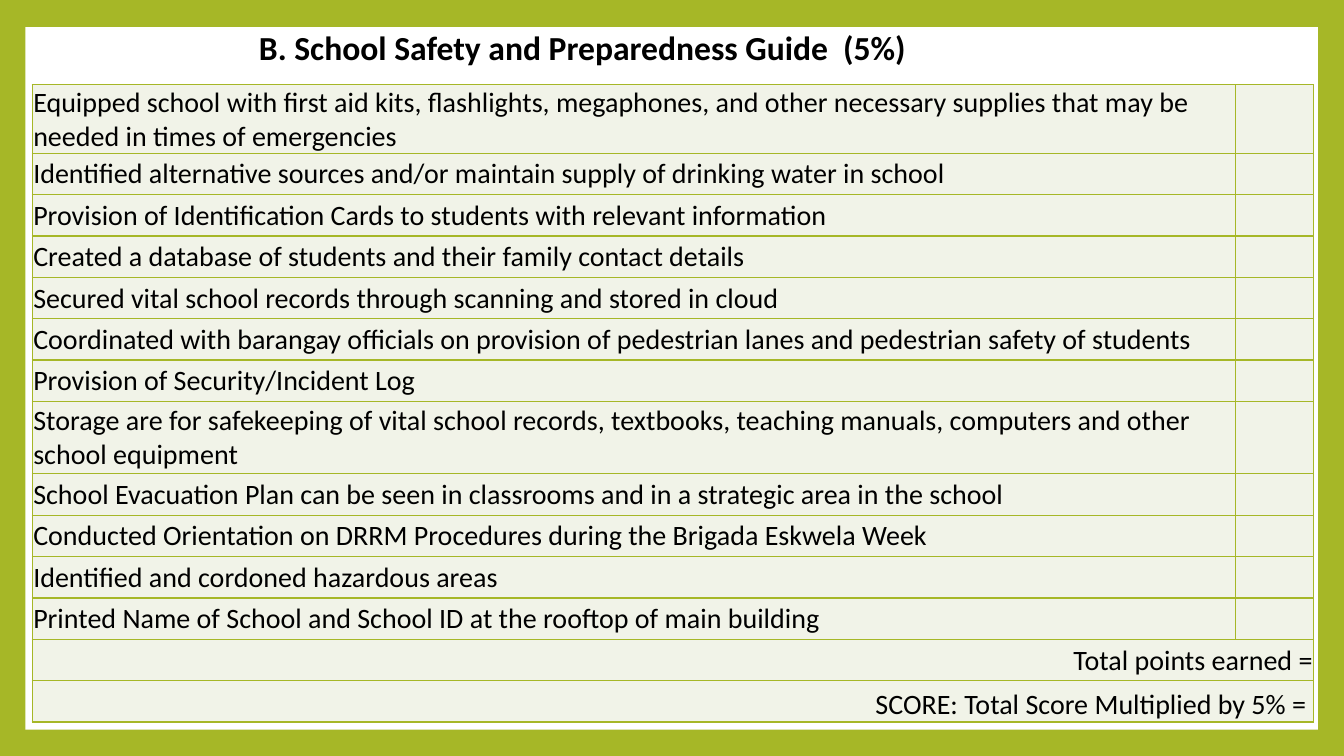
from dataclasses import dataclass

from lxml import etree
from pptx import Presentation
from pptx import util as u
from pptx.dml.color import RGBColor
from pptx.enum import shapes, text
from pptx.oxml import ns

OLIVE = RGBColor(0xA6, 0xB7, 0x27)
PALE = RGBColor(0xF1, 0xF3, 0xE8)
WHITE = RGBColor(0xFF, 0xFF, 0xFF)
BLACK = RGBColor(0x00, 0x00, 0x00)

SLIDE_WIDTH, SLIDE_HEIGHT = u.Inches(13.33), u.Inches(7.5)
CELL_INSETS = {"margin_left": u.Inches(0.01), "margin_right": u.Inches(0.01),
               "margin_top": u.Inches(0.01), "margin_bottom": 0}
LEFT, RIGHT = text.PP_ALIGN.LEFT, text.PP_ALIGN.RIGHT
MIDDLE, BOTTOM = text.MSO_ANCHOR.MIDDLE, text.MSO_ANCHOR.BOTTOM

# Lengths are percentages of the slide's width or height
COLUMN_SHARES = (89.5, 5.85)
ROW_SHARE = 5.47


@dataclass(frozen=True)
class Area:
    left: float
    top: float
    width: float
    height: float

    def box(self) -> tuple[int, int, int, int]:
        return (across(self.left), down(self.top),
                across(self.width), down(self.height))


@dataclass(frozen=True)
class GuideRow:
    wording: str
    height: float = ROW_SHARE
    align: text.PP_ALIGN = LEFT
    anchor: text.MSO_ANCHOR = MIDDLE
    merged: bool = False


PANEL = Area(1.88, 3.6, 96.17, 92.93)
HEADING = Area(18.53, 3.6, 62.57, 5.2)
GUIDE_ROWS = (
    GuideRow("Equipped school with first aid kits, flashlights, megaphones, and other "
             "necessary supplies that may be needed in times of emergencies", 9.07),
    GuideRow("Identified alternative sources and/or maintain supply of drinking water in school"),
    GuideRow("Provision of Identification Cards to students with relevant information"),
    GuideRow("Created a database of students and their family contact details"),
    GuideRow("Secured vital school records through scanning and stored in cloud"),
    GuideRow("Coordinated with barangay officials on provision of pedestrian lanes "
             "and pedestrian safety of students"),
    GuideRow("Provision of Security/Incident Log"),
    GuideRow("Storage are for safekeeping of vital school records, textbooks, teaching "
             "manuals, computers and other school equipment", 9.6),
    GuideRow("School Evacuation Plan can be seen in classrooms and in a strategic area in the school"),
    GuideRow("Conducted Orientation on DRRM Procedures during the Brigada Eskwela Week"),
    GuideRow("Identified and cordoned hazardous areas"),
    GuideRow("Printed Name of School and School ID at the rooftop of main building"),
    GuideRow("Total points earned =", align=RIGHT, merged=True),
    GuideRow("SCORE: Total Score Multiplied by 5% = ", align=RIGHT, anchor=BOTTOM, merged=True),
)
GUIDE = Area(2.4, 11.2, sum(COLUMN_SHARES), sum(row.height for row in GUIDE_ROWS))


def across(share: float) -> int:
    return round(SLIDE_WIDTH * share / 100)


def down(share: float) -> int:
    return round(SLIDE_HEIGHT * share / 100)


def apply(target, formats: dict) -> None:
    for attribute, value in formats.items():
        setattr(target, attribute, value)


def write(paragraph, wording: str, size: int, bold: bool = False) -> None:
    run = paragraph.add_run()
    run.text = wording
    apply(run.font, {"name": "Calibri", "size": u.Pt(size), "bold": bold})
    run.font.color.rgb = BLACK


def style_cell(cell) -> None:
    apply(cell, CELL_INSETS)
    properties = cell._tc.get_or_add_tcPr()
    for side in ("lnL", "lnR", "lnT", "lnB"):
        line = etree.SubElement(properties, ns.qn(f"a:{side}"), w=str(u.Pt(1)))
        fill = etree.SubElement(line, ns.qn("a:solidFill"))
        etree.SubElement(fill, ns.qn("a:srgbClr"), val=str(OLIVE))
    cell.fill.solid()
    cell.fill.fore_color.rgb = PALE


def draw_panel(slide) -> None:
    panel = slide.shapes.add_shape(shapes.MSO_SHAPE.RECTANGLE, *PANEL.box())
    panel.shadow.inherit = False
    panel.fill.solid()
    panel.fill.fore_color.rgb = WHITE
    panel.line.fill.background()


def draw_heading(slide) -> None:
    frame = slide.shapes.add_textbox(*HEADING.box()).text_frame
    apply(frame, {"word_wrap": True, "vertical_anchor": MIDDLE})
    heading = frame.paragraphs[0]
    apply(heading, {"space_before": u.Pt(5), "space_after": u.Pt(6)})
    write(heading, "B. School Safety and Preparedness Guide  (5%)", 24, bold=True)


def draw_guide(slide) -> None:
    guide = slide.shapes.add_table(len(GUIDE_ROWS), len(COLUMN_SHARES), *GUIDE.box()).table
    apply(guide, {"first_row": False, "horz_banding": False})
    for column, share in zip(guide.columns, COLUMN_SHARES):
        column.width = across(share)
    for index, entry in enumerate(GUIDE_ROWS):
        guide.rows[index].height = down(entry.height)
        item, points = guide.cell(index, 0), guide.cell(index, 1)
        for cell in (item, points):
            style_cell(cell)
        if entry.merged:
            item.merge(points)
        item.vertical_anchor = entry.anchor
        wording = item.text_frame.paragraphs[0]
        wording.alignment = entry.align
        write(wording, entry.wording, 20)


def main() -> None:
    deck = Presentation()
    apply(deck, {"slide_width": SLIDE_WIDTH, "slide_height": SLIDE_HEIGHT})
    slide = deck.slides.add_slide(deck.slide_layouts[6])

    # Olive frame around the white panel
    slide.background.fill.solid()
    slide.background.fill.fore_color.rgb = OLIVE
    draw_panel(slide)

    # Heading and checklist
    draw_heading(slide)
    draw_guide(slide)
    deck.save("out.pptx")


if __name__ == "__main__":
    main()
